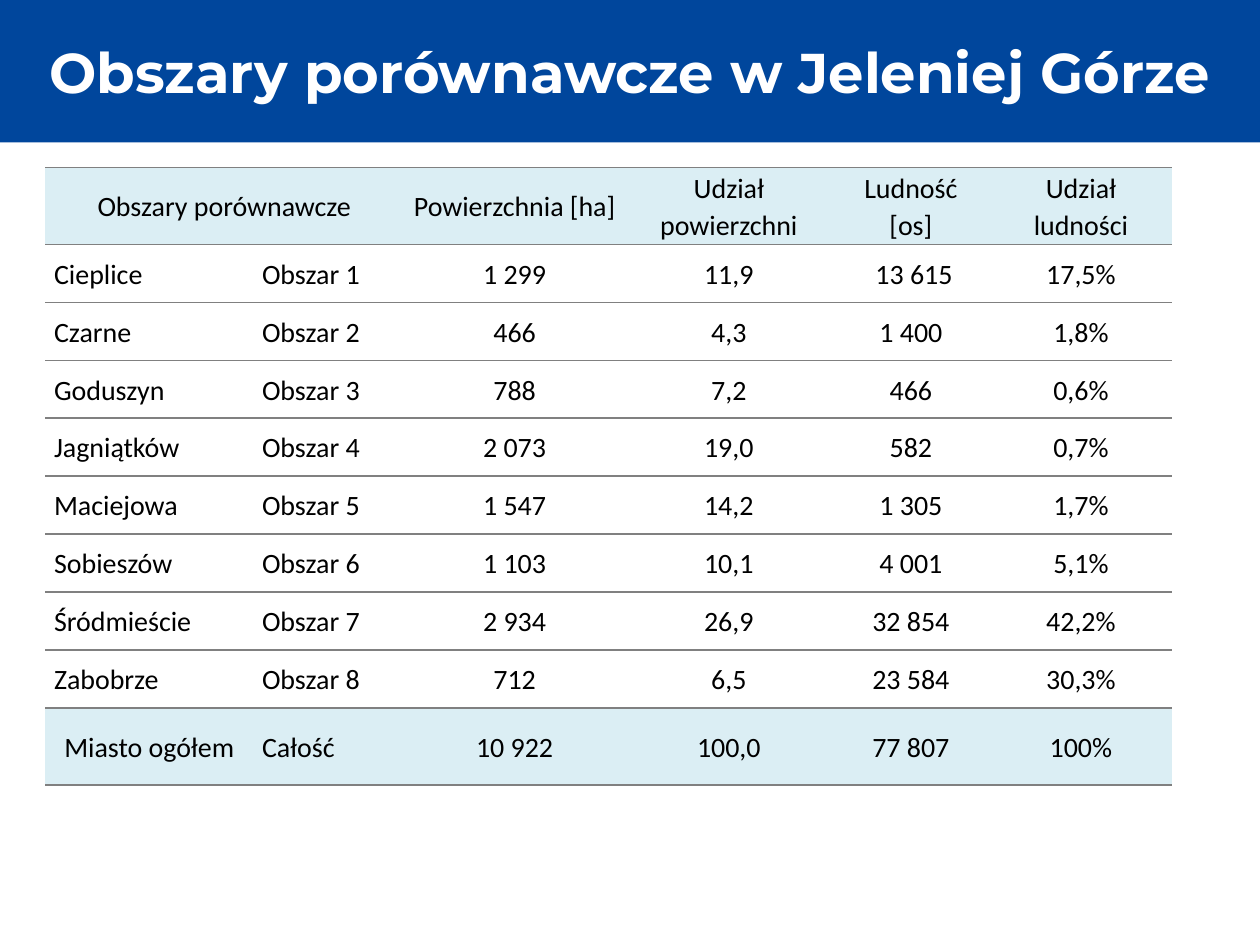
from lxml.etree import SubElement
from pptx import Presentation
from pptx.dml.color import RGBColor
from pptx.enum.shapes import MSO_SHAPE
from pptx.enum.text import MSO_ANCHOR, PP_ALIGN
from pptx.oxml.ns import qn
from pptx.util import Inches, Pt

COLORS = {
    "banner": "00469C",
    "title": "FFFFFF",
    "band": "DBEEF4",
    "rule": "808080",
    "text": "000000",
}
COLUMN_WIDTHS = [1.65, 1.19, 1.77, 1.63, 1.26, 1.44]
BAND_HEIGHT = 0.61
ROW_HEIGHT = 0.46
HEADER = ["Obszary porównawcze", "", "Powierzchnia [ha]",
          "Udział powierzchni", "Ludność [os]", "Udział ludności"]
AREAS = [
    ["Cieplice", "1 299", "11,9", " 13 615", "17,5%"],
    ["Czarne", "466", "4,3", "1 400", "1,8%"],
    ["Goduszyn", "788", "7,2", "466", "0,6%"],
    ["Jagniątków", "2 073", "19,0", "582", "0,7%"],
    ["Maciejowa", "1 547", "14,2", "1 305", "1,7%"],
    ["Sobieszów", "1 103", "10,1", "4 001", "5,1%"],
    ["Śródmieście", "2 934", "26,9", "32 854", "42,2%"],
    ["Zabobrze", "712", "6,5", "23 584", "30,3%"],
]
TOTAL = ["Miasto ogółem", "Całość", "10 922", "100,0", "77 807", "100%"]


def color(name):
    """Return the named colour."""
    return RGBColor.from_string(COLORS[name])


def style_paragraph(para, font_name, size, color_name, align):
    """Set the font and alignment of a paragraph."""
    para.alignment = align
    para.font.name = font_name
    para.font.size = Pt(size)
    para.font.color.rgb = color(color_name)


def add_banner(page, box, title):
    """Place the title banner in the box."""
    banner = page.shapes.add_shape(MSO_SHAPE.RECTANGLE, *box)
    banner.shadow.inherit = False
    banner.fill.solid()
    banner.fill.fore_color.rgb = color("banner")
    banner.line.fill.background()
    frame = banner.text_frame
    frame.word_wrap = True
    frame.vertical_anchor = MSO_ANCHOR.MIDDLE
    frame.text = title
    para = frame.paragraphs[0]
    style_paragraph(para, "Montserrat", 32, "title", PP_ALIGN.CENTER)
    para.font.bold = True


def rule_cell(cell):
    """Give a cell rules above and below and none at its sides."""
    properties = cell._tc.get_or_add_tcPr()
    for side in ("L", "R", "T", "B"):
        line = SubElement(properties, qn(f"a:ln{side}"), w=str(Pt(1)))
        if side in "LR":
            SubElement(line, qn("a:noFill"))
        else:
            fill = SubElement(line, qn("a:solidFill"))
            SubElement(fill, qn("a:srgbClr"), val=COLORS["rule"])


def fill_cell(cell, text, align, banded):
    """Write and style one table cell."""
    rule_cell(cell)
    if banded:
        cell.fill.solid()
        cell.fill.fore_color.rgb = color("band")
    else:
        cell.fill.background()
    cell.vertical_anchor = MSO_ANCHOR.MIDDLE
    cell.margin_left = cell.margin_right = Inches(0.07)
    cell.margin_top = cell.margin_bottom = 0
    cell.text = text
    para = cell.text_frame.paragraphs[0]
    para.line_spacing = 1.07
    style_paragraph(para, "Calibri", 16, "text", align)


def add_area_table(page, box):
    """Place the table of comparison areas in the box."""
    body = [[name, f"Obszar {number}", *values]
            for number, (name, *values) in enumerate(AREAS, 1)]
    rows = [HEADER, *body, TOTAL]
    table = page.shapes.add_table(len(rows), len(HEADER), *box).table
    table.first_row = table.horz_banding = False
    for column, width in zip(table.columns, COLUMN_WIDTHS):
        column.width = Inches(width)
    for row_index, values in enumerate(rows):
        banded = row_index in (0, len(rows) - 1)
        table.rows[row_index].height = Inches(BAND_HEIGHT if banded else ROW_HEIGHT)
        for column_index, text in enumerate(values):
            is_label = column_index == 1 or (column_index == 0 and not banded)
            align = PP_ALIGN.LEFT if is_label else PP_ALIGN.CENTER
            fill_cell(table.cell(row_index, column_index), text, align, banded)
    table.cell(0, 0).merge(table.cell(0, 1))


def main():
    """Build and save the deck."""
    deck = Presentation()
    deck.slide_width, deck.slide_height = Inches(10), Inches(7.5)
    page = deck.slides.add_slide(deck.slide_layouts[6])
    add_banner(page, (0, 0, deck.slide_width, Inches(1.13)),
               "Obszary porównawcze w Jeleniej Górze")
    add_area_table(page, (Inches(0.36), Inches(1.33), Inches(8.94), Inches(4.9)))
    deck.save("out.pptx")


if __name__ == "__main__":
    main()
